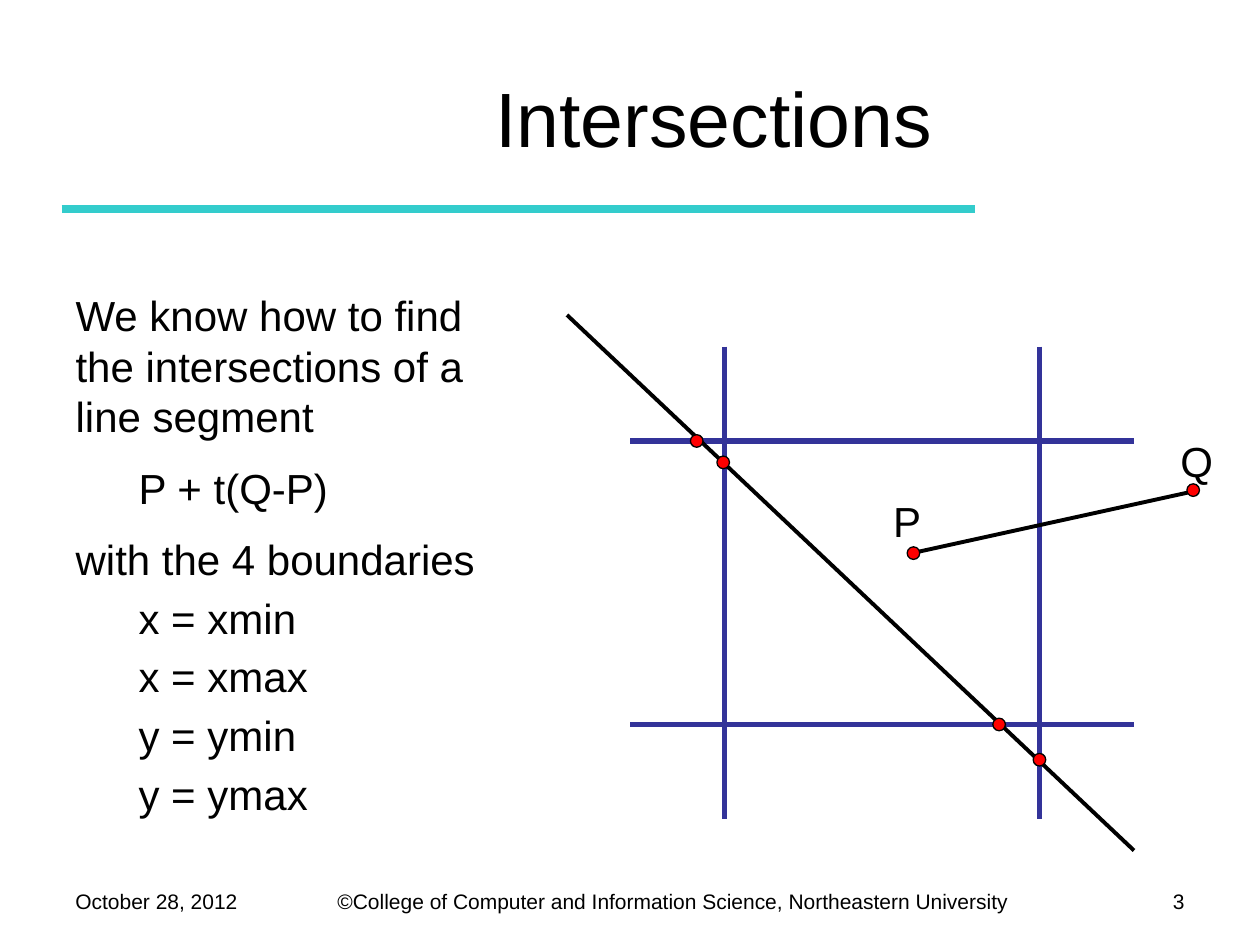
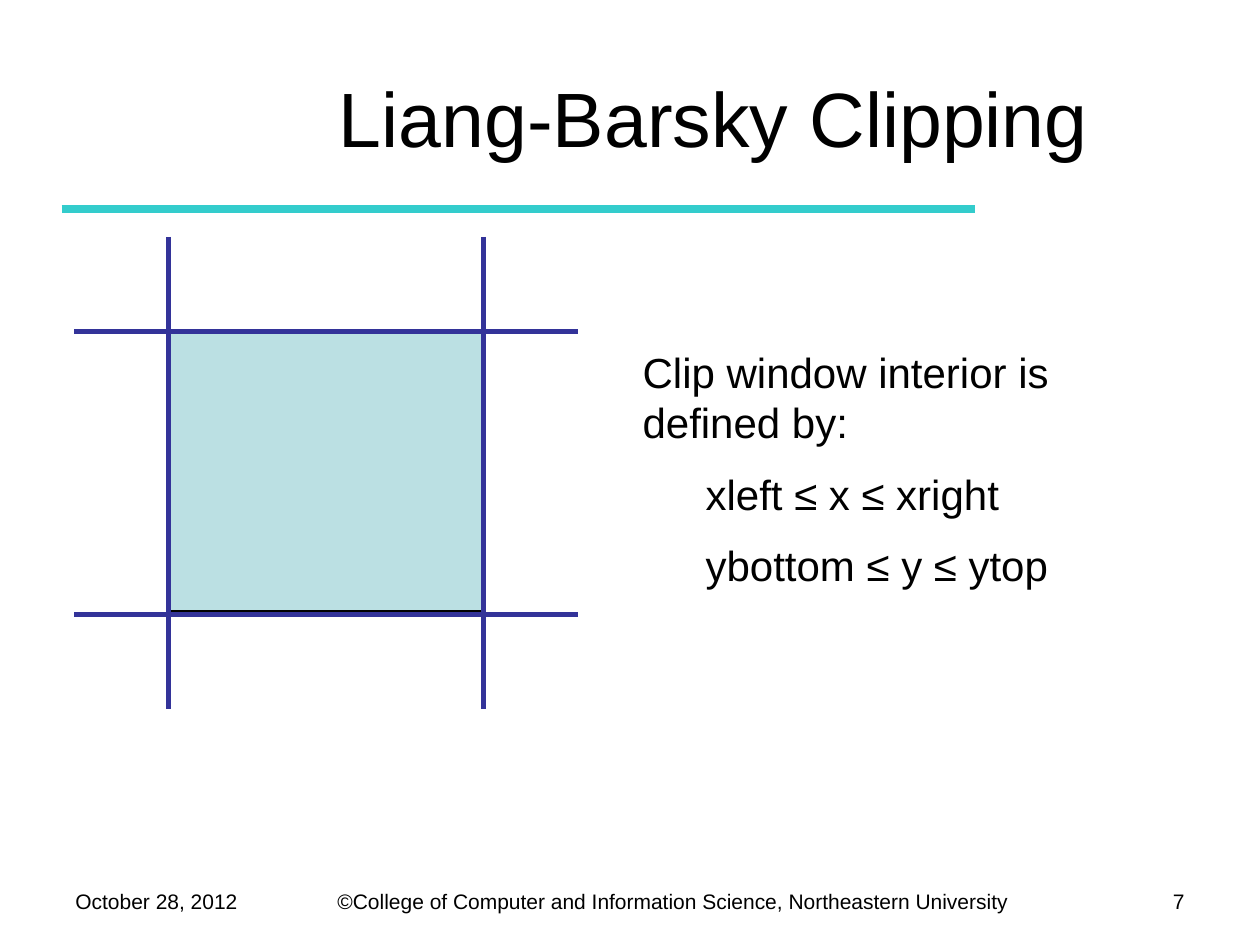
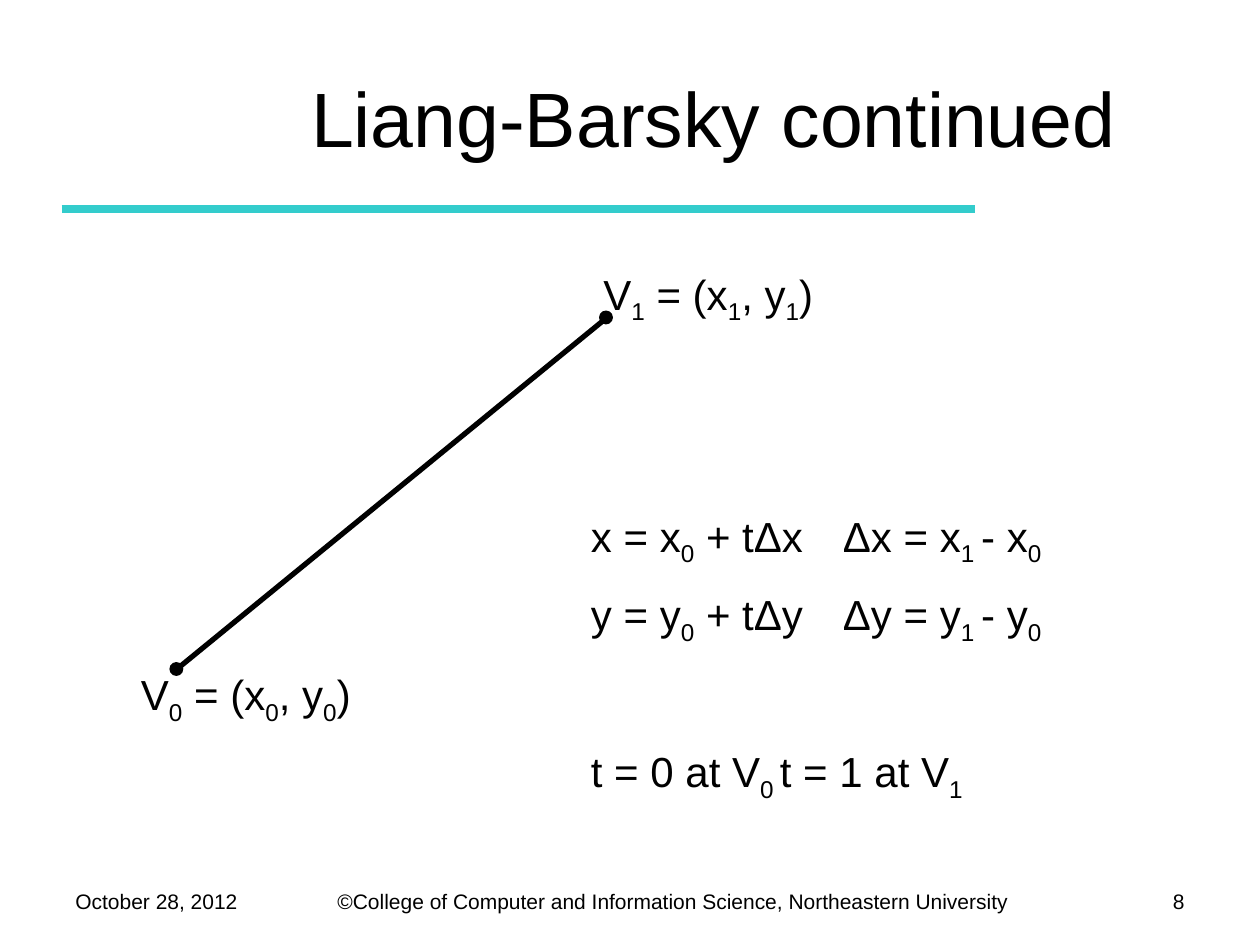
from lxml.etree import SubElement
from pptx import Presentation
from pptx.dml.color import RGBColor
from pptx.enum.shapes import MSO_CONNECTOR, MSO_SHAPE
from pptx.enum.text import MSO_ANCHOR, MSO_AUTO_SIZE, PP_ALIGN
from pptx.oxml.ns import qn
from pptx.util import Emu, Pt

EMU_PER_PX = 9144  # 100 px to the inch
COLORS = {
    "black": "000000",
    "rule": "33CCCC",
    "boundary": "333399",
    "point": "FF0000",
    "window": "BBE0E3",
}
FONT = "Arial"
BODY_SIZE, FOOTER_SIZE, TITLE_SIZE = 24, 12, 44
WIDE_GAP, NARROW_GAP = 12, 4.8  # points before a paragraph
INDENT = 50
DATE = "October 28, 2012"
COPYRIGHT = "©College of Computer and Information Science, Northeastern University"


def px(value):
    return Emu(round(value * EMU_PER_PX))


def color(name):
    return RGBColor.from_string(COLORS[name])


class Deck:
    """Holds the shared style and the slide being built."""

    def __init__(self):
        self.presentation = Presentation()
        self.presentation.slide_width = px(1000)
        self.presentation.slide_height = px(750)
        self.slide = None

    def new_slide(self, title, number):
        layout = self.presentation.slide_layouts[1]
        self.slide = self.presentation.slides.add_slide(layout)
        # Title
        shape = self.slide.shapes.title
        self.place(shape, 183, 30, 767, 125, MSO_ANCHOR.MIDDLE)
        self.fill_paragraph(shape.text_frame.paragraphs[0], title, TITLE_SIZE, PP_ALIGN.CENTER)
        # Rule and footer
        self.line((49, 166), (774, 166), "rule", 4.5)
        self.text(COPYRIGHT, 258, 700, 566, 30, FOOTER_SIZE)
        self.text(DATE, 50, 700, 175, 33, FOOTER_SIZE)
        self.text(str(number), 867, 700, 83, 35, FOOTER_SIZE, PP_ALIGN.RIGHT)

    def place(self, shape, left, top, width, height, anchor=MSO_ANCHOR.TOP):
        shape.left, shape.top = px(left), px(top)
        shape.width, shape.height = px(width), px(height)
        frame = shape.text_frame
        frame.word_wrap = True
        frame.auto_size = MSO_AUTO_SIZE.NONE
        frame.vertical_anchor = anchor

    def fill_paragraph(self, paragraph, text, size, align=PP_ALIGN.LEFT):
        """Add text in which every second part between bars is a subscript."""
        paragraph.alignment = align
        paragraph.font.name = FONT
        paragraph.font.size = Pt(size)
        paragraph.font.color.rgb = color("black")
        for index, part in enumerate(text.split("|")):
            if part:
                run = paragraph.add_run()
                run.text = part
                if index % 2:
                    run._r.get_or_add_rPr().set("baseline", "-25000")

    def text(self, text, left, top, width, height, size=BODY_SIZE, align=PP_ALIGN.LEFT):
        shape = self.slide.shapes.add_textbox(0, 0, 0, 0)
        self.place(shape, left, top, width, height)
        self.fill_paragraph(shape.text_frame.paragraphs[0], text, size, align)

    def body(self, items, left, top, width, height):
        """Fill the body with (text, space before, indent, tab stop) items."""
        shape = self.slide.placeholders[1]
        self.place(shape, left, top, width, height)
        frame = shape.text_frame
        for index, (text, gap, indent, tab) in enumerate(items):
            paragraph = frame.add_paragraph() if index else frame.paragraphs[0]
            properties = paragraph._p.get_or_add_pPr()
            properties.set("marL", str(px(indent)))
            properties.set("indent", "0")
            SubElement(properties, qn("a:buNone"))
            if tab:
                stops = SubElement(properties, qn("a:tabLst"))
                SubElement(stops, qn("a:tab"), pos=str(px(tab)), algn="l")
            paragraph.space_before = Pt(gap)
            self.fill_paragraph(paragraph, text, BODY_SIZE)

    def line(self, start, end, color_name, width):
        connector = self.slide.shapes.add_connector(
            MSO_CONNECTOR.STRAIGHT, *map(px, start + end))
        connector.line.color.rgb = color(color_name)
        connector.line.width = Pt(width)
        SubElement(connector._element.spPr, qn("a:effectLst"))

    def shape(self, kind, left, top, width, height, fill):
        shape = self.slide.shapes.add_shape(kind, *map(px, (left, top, width, height)))
        shape.shadow.inherit = False
        shape.fill.solid()
        shape.fill.fore_color.rgb = color(fill)
        shape.line.color.rgb = color("black")
        shape.line.width = Pt(0.75)

    def dot(self, x, y, fill):
        self.shape(MSO_SHAPE.OVAL, x - 5, y - 5, 10, 10, fill)

    def boundaries(self, left, top):
        """Draw the four boundary lines of a clip window."""
        for x in (left + 75, left + 325):
            self.line((x, top), (x, top + 375), "boundary", 3)
        for y in (top + 75, top + 300):
            self.line((left, y), (left + 400, y), "boundary", 3)


def intersections(deck):
    deck.new_slide("Intersections", 3)
    deck.body([
        ("We know how to find the intersections of a line segment", 0, 0, None),
        ("P + t(Q-P)", WIDE_GAP, INDENT, None),
        ("with the 4 boundaries", WIDE_GAP, 0, None),
        *((f"{edge[0]} = {edge}", NARROW_GAP, INDENT, None)
          for edge in ("xmin", "xmax", "ymin", "ymax")),
    ], 50, 225, 375, 441)
    deck.boundaries(500, 275)
    # Segments and their points
    deck.line((900, 675), (450, 250), "black", 2.25)
    deck.line((724, 439), (947, 390), "black", 2.25)
    for x, y in ((553, 350), (574, 367), (793, 575), (825, 603), (725, 439), (947, 389)):
        deck.dot(x, y, "point")
    deck.text("P", 699, 388, 47, 50)
    deck.text("Q", 927, 341, 47, 50)


def clipping(deck):
    deck.new_slide("Liang-Barsky Clipping", 7)
    deck.shape(MSO_SHAPE.RECTANGLE, 134, 262, 249, 223, "window")
    deck.boundaries(59, 188)
    deck.body([
        ("Clip window interior is defined by:", 0, 0, None),
        ("xleft ≤ x ≤ xright", WIDE_GAP, INDENT, None),
        ("ybottom ≤ y ≤ ytop", WIDE_GAP, INDENT, None),
    ], 500, 270, 433, 212)


def continued(deck):
    deck.new_slide("Liang-Barsky continued", 8)
    # Segment from V0 to V1
    deck.line((138, 533), (483, 251), "black", 3)
    for index, point, label in ((0, (140, 531), (102, 526)), (1, (481, 252), (469, 208))):
        deck.dot(*point, "black")
        deck.text(f"V|{index}| = (x|{index}|, y|{index}|)", *label, 241, 50)
    # Parametric equations
    equation = "{0} = {0}|0| + tΔ{0}\tΔ{0} = {0}|1 |- {0}|0|"
    deck.body([
        (equation.format("x"), 0, 0, 259),
        (equation.format("y"), WIDE_GAP, 0, 259),
        ("t = 0 at V|0|\tt = 1 at V|1|", 57, 0, 155),
    ], 459, 400, 472, 212)


def main():
    deck = Deck()
    for build in (intersections, clipping, continued):
        build(deck)
    deck.presentation.save("out.pptx")


if __name__ == "__main__":
    main()
